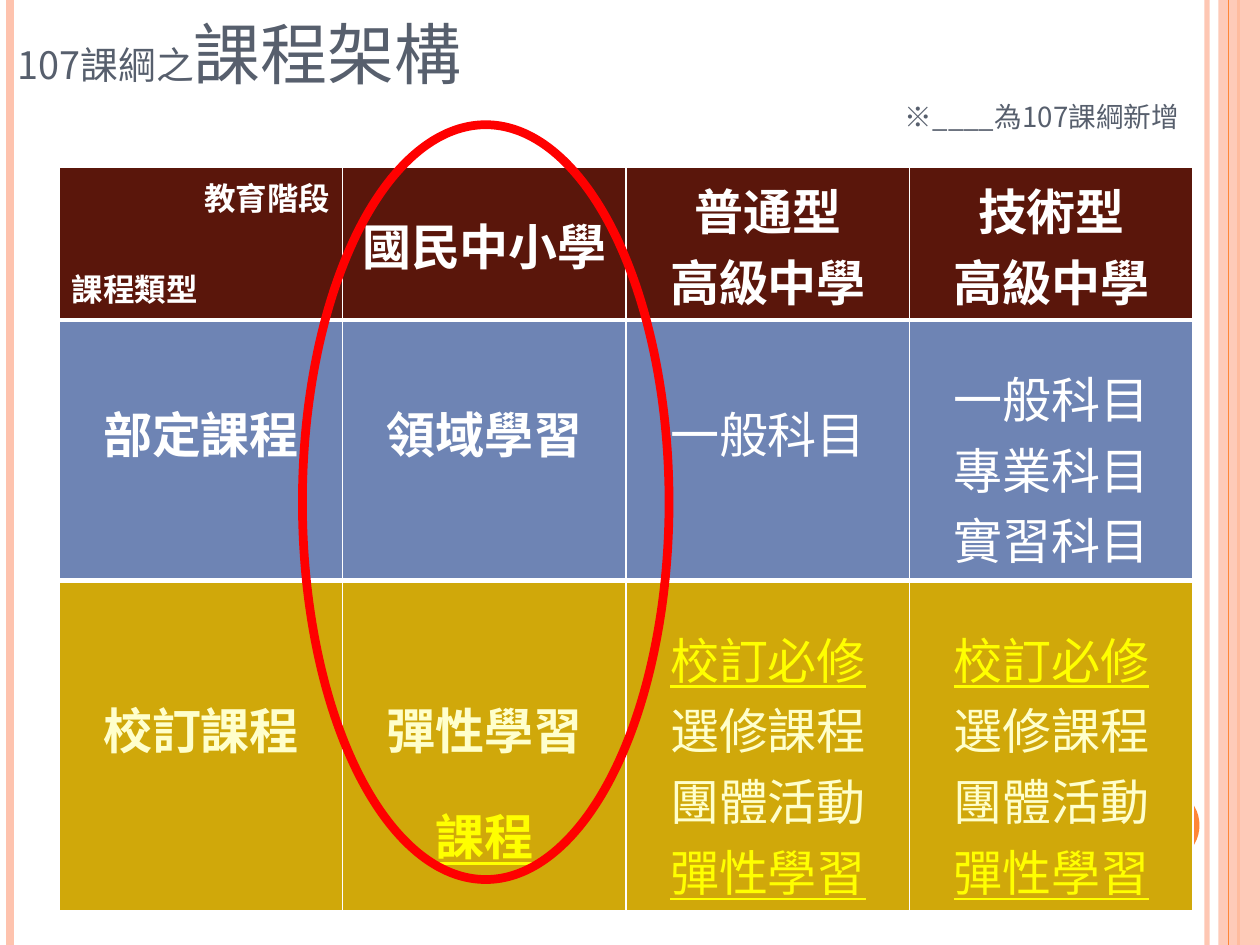
from lxml import etree
from pptx import Presentation
from pptx.dml.color import RGBColor
from pptx.enum.shapes import MSO_CONNECTOR, MSO_SHAPE
from pptx.enum.text import PP_ALIGN
from pptx.oxml.ns import qn
from pptx.util import Inches, Pt

LINE = MSO_CONNECTOR.STRAIGHT
RECT, OVAL = MSO_SHAPE.RECTANGLE, MSO_SHAPE.OVAL
LEFT, MID, RIGHT = PP_ALIGN.LEFT, PP_ALIGN.CENTER, PP_ALIGN.RIGHT
FACE = "Noto Sans CJK SC"
PEACH, ORANGE, GREY = "FEC3AE", "FE8637", "575F6D"
WHITE, CREAM, YELLOW = "FFFFFF", "FFFFCC", "FFFF00"

# Row fill, text colour, height
ROWS = [("5A160B", WHITE, 1.21), ("6E84B4", WHITE, 2.07), ("D0A80A", CREAM, 2.62)]
# Lines, bold, top margin, number of lines spaced 1.5; "_" marks a new item
TOP, LOW = 0.05, 0.61
CHOICES = (["_校訂必修", "選修課程", "團體活動", "_彈性學習"], False, TOP, 1)
CELLS = [
    [(["教育階段", "課程類型"], True, TOP, 0),
     (["國民中小學"], True, TOP, 1),
     (["普通型", "高級中學"], True, TOP, 0),
     (["技術型", "高級中學"], True, TOP, 0)],
    [(["部定課程"], True, LOW, 0),
     (["領域學習"], True, LOW, 0),
     (["一般科目"], False, LOW, 0),
     (["一般科目", "專業科目", "實習科目"], False, TOP, 1)],
    [(["校訂課程"], True, LOW, 1),
     (["彈性學習", "_課程"], True, LOW, 2),
     CHOICES, CHOICES],
]


def rgb(code):
    return RGBColor.from_string(code)


def fade(fill, share):
    """Set the opacity of a solid fill, in percent."""
    tint = fill._xPr.find(qn("a:solidFill"))[0]
    etree.SubElement(tint, qn("a:alpha"), val=str(share * 1000))


def style(font, size, color, bold=False, under=False):
    font.name, font.size, font.bold = FACE, Pt(size), bold
    font.underline = under
    font.color.rgb = rgb(color)
    latin = font._element.find(qn("a:latin"))
    latin.addnext(latin.makeelement(qn("a:ea"), {"typeface": FACE}))


def add_rule(slide, x, width, color, share=100):
    """Draw a full-height vertical line."""
    rule = slide.shapes.add_connector(LINE, Inches(x), 0, Inches(x), Inches(7.5))
    rule.line.color.rgb = rgb(color)
    rule.line.width = Pt(width)
    fade(rule.line.fill, share)
    etree.SubElement(rule._element.spPr, qn("a:effectLst"))


def add_shape(slide, kind, box, fill=None, line=None, width=0, share=100):
    shape = slide.shapes.add_shape(kind, *map(Inches, box))
    shape.shadow.inherit = False
    if fill:
        shape.fill.solid()
        shape.fill.fore_color.rgb = rgb(fill)
        fade(shape.fill, share)
    else:
        shape.fill.background()
    if line:
        shape.line.color.rgb = rgb(line)
        shape.line.width = Pt(width)
    else:
        shape.line.fill.background()


def add_text(slide, box, runs, align):
    """Add one line of small capitals."""
    frame = slide.shapes.add_textbox(*map(Inches, box)).text_frame
    frame.word_wrap = True
    frame.margin_left = frame.margin_right = 0
    frame.margin_top = frame.margin_bottom = 0
    para = frame.paragraphs[0]
    para.alignment = align
    for text, size in runs:
        run = para.add_run()
        run.text = text
        style(run.font, size, GREY)
        run.font._element.set("cap", "small")


def fill_cell(cell, fill, color, lines, bold, top, loose, size=28):
    cell.fill.solid()
    cell.fill.fore_color.rgb = rgb(fill)
    cell.margin_top = Inches(top)
    frame = cell.text_frame
    frame.text = "\n".join(line.lstrip("_") for line in lines)
    for i, (para, line) in enumerate(zip(frame.paragraphs, lines)):
        new = line.startswith("_")
        para.alignment = MID
        if i < loose:
            para.line_spacing = 1.5
        style(para.font, size, YELLOW if new else color, bold, new)


def add_edge(cell, side, width):
    """Draw a white border on one side of a cell."""
    props = cell._tc.get_or_add_tcPr()
    edge = props.makeelement(qn("a:" + side), {"w": str(Pt(width))})
    props.insert(0, edge)
    paint = etree.SubElement(edge, qn("a:solidFill"))
    etree.SubElement(paint, qn("a:srgbClr"), val=WHITE)


def add_grid(slide):
    box = map(Inches, (0.47, 1.33, 9, 5.9))
    table = slide.shapes.add_table(3, 4, *box).table
    table.horz_banding = False
    for r, (fill, color, height) in enumerate(ROWS):
        table.rows[r].height = Inches(height)
        for c, entry in enumerate(CELLS[r]):
            size = 18 if r == c == 0 else 28
            fill_cell(table.cell(r, c), fill, color, *entry, size)
    for c in range(4):
        add_edge(table.cell(0, c), "lnB", 3)
        add_edge(table.cell(1, c), "lnT", 3)
    stage, course = table.cell(0, 0).text_frame.paragraphs
    stage.alignment, course.alignment = RIGHT, LEFT
    course.space_before = Pt(26)


def main():
    deck = Presentation()
    deck.slide_width, deck.slide_height = Inches(10), Inches(7.5)
    slide = deck.slides.add_slide(deck.slide_layouts[6])
    add_rule(slide, 9.58, 3, PEACH, 93)
    add_rule(slide, 0.08, 4.5, PEACH)
    add_rule(slide, 9.83, 1.5, ORANGE)
    add_shape(slide, RECT, (9.67, 0, 0.33, 7.5), PEACH, share=87)
    add_rule(slide, 9.75, 0.75, ORANGE)
    add_shape(slide, OVAL, (8.92, 6.25, 0.6, 0.6), ORANGE)
    add_text(slide, (0.14, -0.03, 6, 0.77),
             [("107課綱之", 27), ("課程架構", 47.7)], LEFT)
    add_text(slide, (5.36, 0.74, 4, 0.32), [("※____為107課綱新增", 19.8)], RIGHT)
    add_grid(slide)
    add_shape(slide, OVAL, (2.4, 0.99, 2.91, 5.99), line="FF0000", width=5)
    deck.save("out.pptx")


if __name__ == "__main__":
    main()
